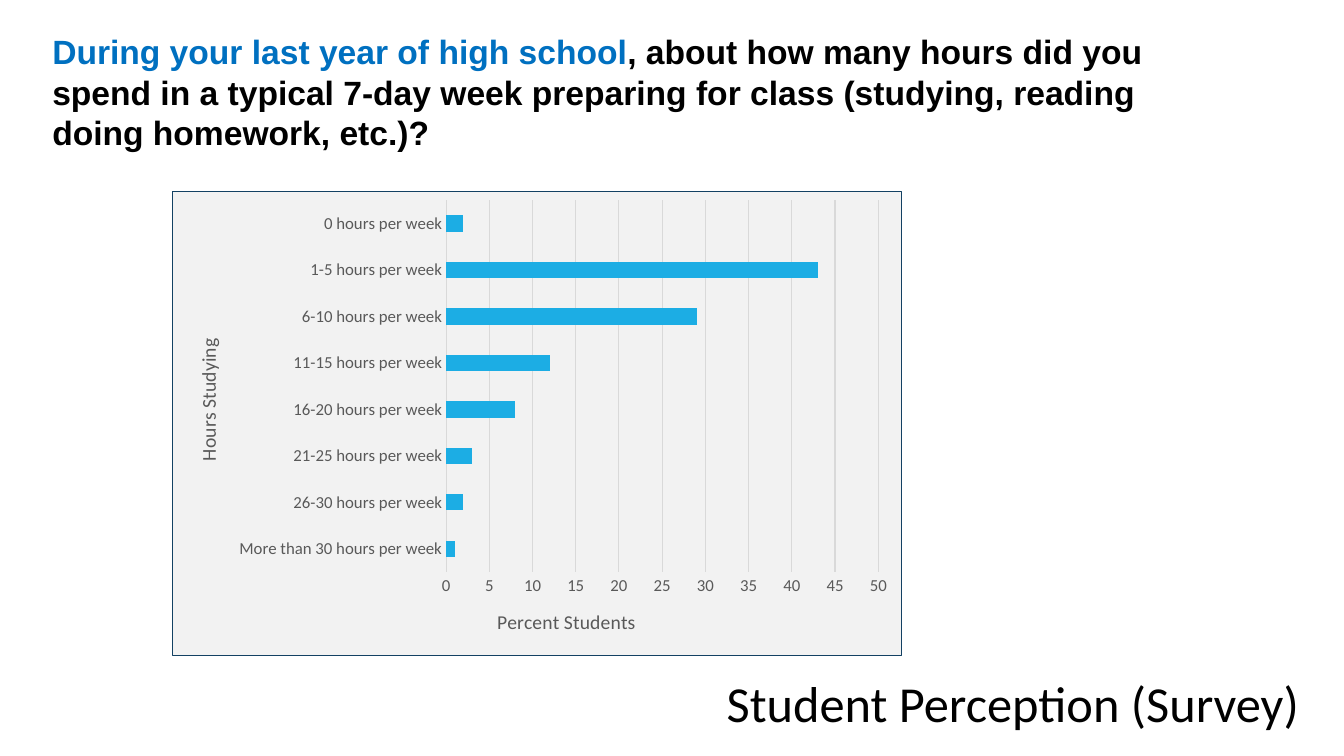
from dataclasses import dataclass

from pptx import Presentation
from pptx.chart import data as chart_data
from pptx.dml.color import RGBColor
from pptx.enum import chart as chart_enum
from pptx.enum import text as text_enum
from pptx.oxml import parse_xml
from pptx.oxml.ns import nsdecls
from pptx.util import Pt

BLACK = RGBColor(0x00, 0x00, 0x00)
QUESTION_BLUE = RGBColor(0x00, 0x70, 0xC0)
BAR_BLUE = RGBColor(0x1C, 0xAD, 0xE4)
BORDER_BLUE = RGBColor(0x13, 0x41, 0x63)
PANEL_GREY = RGBColor(0xF2, 0xF2, 0xF2)
LABEL_GREY = RGBColor(0x59, 0x59, 0x59)
GRID_GREY = RGBColor(0xD9, 0xD9, 0xD9)

HOURS_SHARES = {
    "More than 30 hours per week": 1,
    "26-30 hours per week": 2,
    "21-25 hours per week": 3,
    "16-20 hours per week": 8,
    "11-15 hours per week": 12,
    "6-10 hours per week": 29,
    "1-5 hours per week": 43,
    "0 hours per week": 2,
}


@dataclass(frozen=True)
class Box:
    left: float
    top: float
    width: float
    height: float

    def in_points(self) -> tuple:
        return Pt(self.left), Pt(self.top), Pt(self.width), Pt(self.height)


@dataclass(frozen=True)
class AxisCaption:
    wording: str
    x: float
    y: float
    rotation: int


HOURS_CAPTION = AxisCaption("Hours Studying", 0.025, 0.31, -5400000)
PERCENT_CAPTION = AxisCaption("Percent Students", 0.44, 0.89, 0)


def write(paragraph, wording: str, *, size: float, color: RGBColor,
          font: str = "Calibri", bold: bool = False) -> None:
    run = paragraph.add_run()
    run.text = wording
    run.font.name = font
    run.font.size = Pt(size)
    run.font.bold = bold
    run.font.color.rgb = color


def add_frame(slide, box: Box, inset: float | None = None):
    frame = slide.shapes.add_textbox(*box.in_points()).text_frame
    frame.word_wrap = True
    if inset is not None:
        frame.margin_left = frame.margin_right = Pt(inset)
        frame.margin_top = frame.margin_bottom = Pt(inset)
    return frame


def set_layout(parent, index: int, target: str = "", **fractions: float) -> None:
    for old in parent.xpath("c:layout"):
        parent.remove(old)
    inner = f'<c:layoutTarget val="{target}"/>' if target else ""
    modes = '<c:xMode val="edge"/><c:yMode val="edge"/>'
    sizes = "".join(f'<c:{key} val="{value}"/>' for key, value in fractions.items())
    parent.insert(index, parse_xml(
        f'<c:layout {nsdecls("c")}><c:manualLayout>{inner}{modes}{sizes}'
        "</c:manualLayout></c:layout>"))


def style_axis(axis, caption: AxisCaption) -> None:
    axis.major_tick_mark = axis.minor_tick_mark = chart_enum.XL_TICK_MARK.NONE
    axis.tick_labels.font.size = Pt(12)
    axis.tick_labels.font.name = "Calibri"
    axis.tick_labels.font.color.rgb = LABEL_GREY
    title = axis.axis_title
    write(title.text_frame.paragraphs[0], caption.wording, size=14, color=LABEL_GREY)
    set_layout(title.element, 1, x=caption.x, y=caption.y)
    body = title.element.xpath(".//a:bodyPr")[0]
    body.set("rot", str(caption.rotation))
    body.set("vert", "horz")


def style_panel(chart) -> None:
    chart.element.xpath("c:chart")[0].addnext(parse_xml(
        f'<c:spPr {nsdecls("c", "a")}>'
        f'<a:solidFill><a:srgbClr val="{PANEL_GREY}"/></a:solidFill>'
        f'<a:ln w="{Pt(0.75)}"><a:solidFill><a:srgbClr val="{BORDER_BLUE}"/>'
        "</a:solidFill></a:ln></c:spPr>"))


def add_hours_chart(slide, box: Box) -> None:
    shares = chart_data.CategoryChartData()
    shares.categories = list(HOURS_SHARES)
    shares.add_series("Series 1", list(HOURS_SHARES.values()))
    chart = slide.shapes.add_chart(
        chart_enum.XL_CHART_TYPE.BAR_CLUSTERED, *box.in_points(), shares).chart
    chart.has_legend = False
    chart.has_title = False
    chart.font.name = "Calibri"
    chart.font.size = Pt(10)
    chart.font.color.rgb = BLACK
    style_panel(chart)

    bars = chart.plots[0]
    bars.gap_width = 182
    bars.vary_by_categories = False
    bars.series[0].format.fill.solid()
    bars.series[0].format.fill.fore_color.rgb = BAR_BLUE

    hours, percent = chart.category_axis, chart.value_axis
    style_axis(hours, HOURS_CAPTION)
    style_axis(percent, PERCENT_CAPTION)
    percent.minimum_scale, percent.maximum_scale, percent.major_unit = 0, 50, 5
    percent.has_major_gridlines = True
    percent.format.line.fill.background()
    for line in (hours.format.line, percent.major_gridlines.format.line):
        line.color.rgb = GRID_GREY
        line.width = Pt(0.75)
    set_layout(chart.element.xpath("c:chart/c:plotArea")[0], 0, "inner",
               x=0.375, y=0.02, w=0.593, h=0.8)


def add_question(slide, box: Box) -> None:
    question = add_frame(slide, box).paragraphs[0]
    write(question, "During your last year of high school",
          size=24, color=QUESTION_BLUE, font="Arial", bold=True)
    write(question, ", about how many hours did you spend in a typical 7-day week "
          "preparing for class (studying, reading doing homework, etc.)?",
          size=24, color=BLACK, font="Arial", bold=True)


def add_topic(slide, box: Box) -> None:
    frame = add_frame(slide, box, inset=3.6)
    frame.vertical_anchor = text_enum.MSO_ANCHOR.MIDDLE
    topic = frame.paragraphs[0]
    topic.alignment = text_enum.PP_ALIGN.RIGHT
    topic.line_spacing = 0.9
    topic.space_before = Pt(12)
    topic.space_after = Pt(2)
    write(topic, "Student Perception (Survey)", size=36, color=BLACK)


def main() -> None:
    deck = Presentation()
    deck.slide_width, deck.slide_height = Pt(960), Pt(540)
    slide = deck.slides.add_slide(deck.slide_layouts[6])
    add_question(slide, Box(30.24, 18.72, 840.96, 90))
    add_hours_chart(slide, Box(123.12, 136.08, 521.28, 332.64))
    add_topic(slide, Box(480.24, 482.4, 451.44, 44.64))
    deck.save("out.pptx")


if __name__ == "__main__":
    main()
